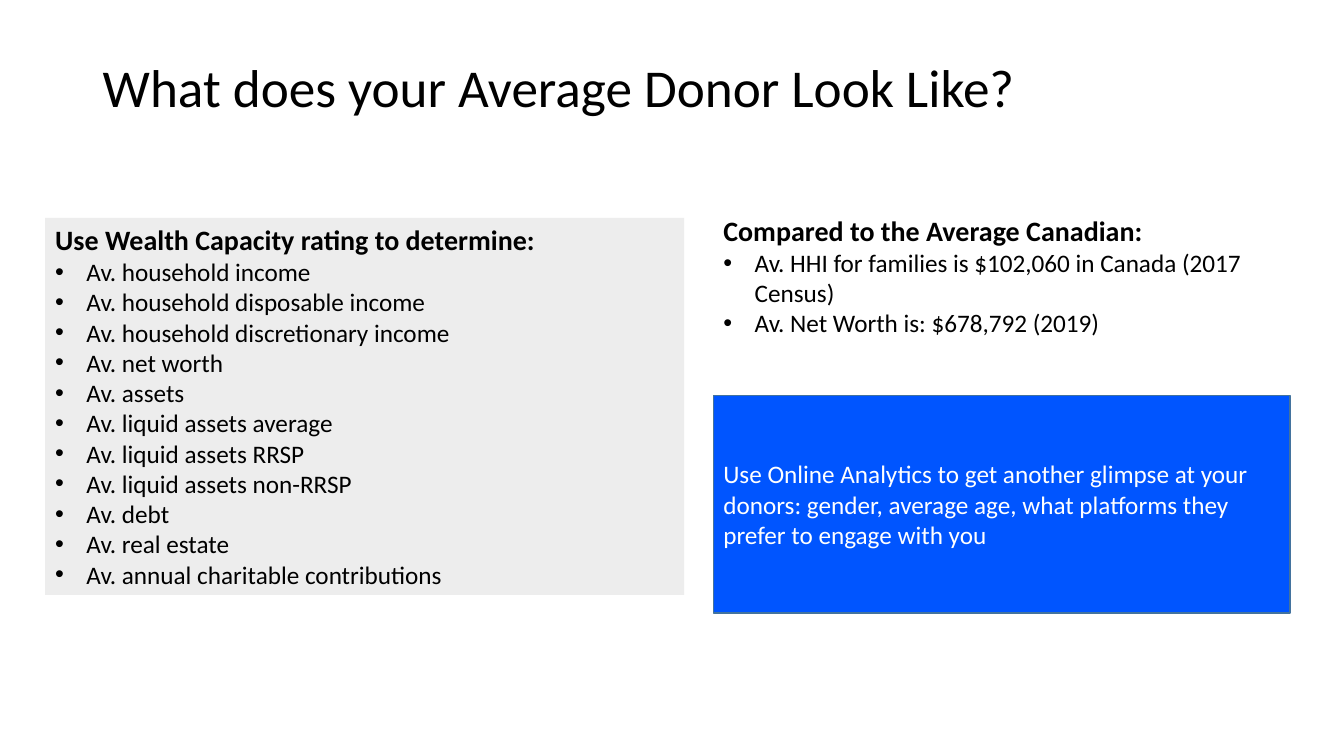
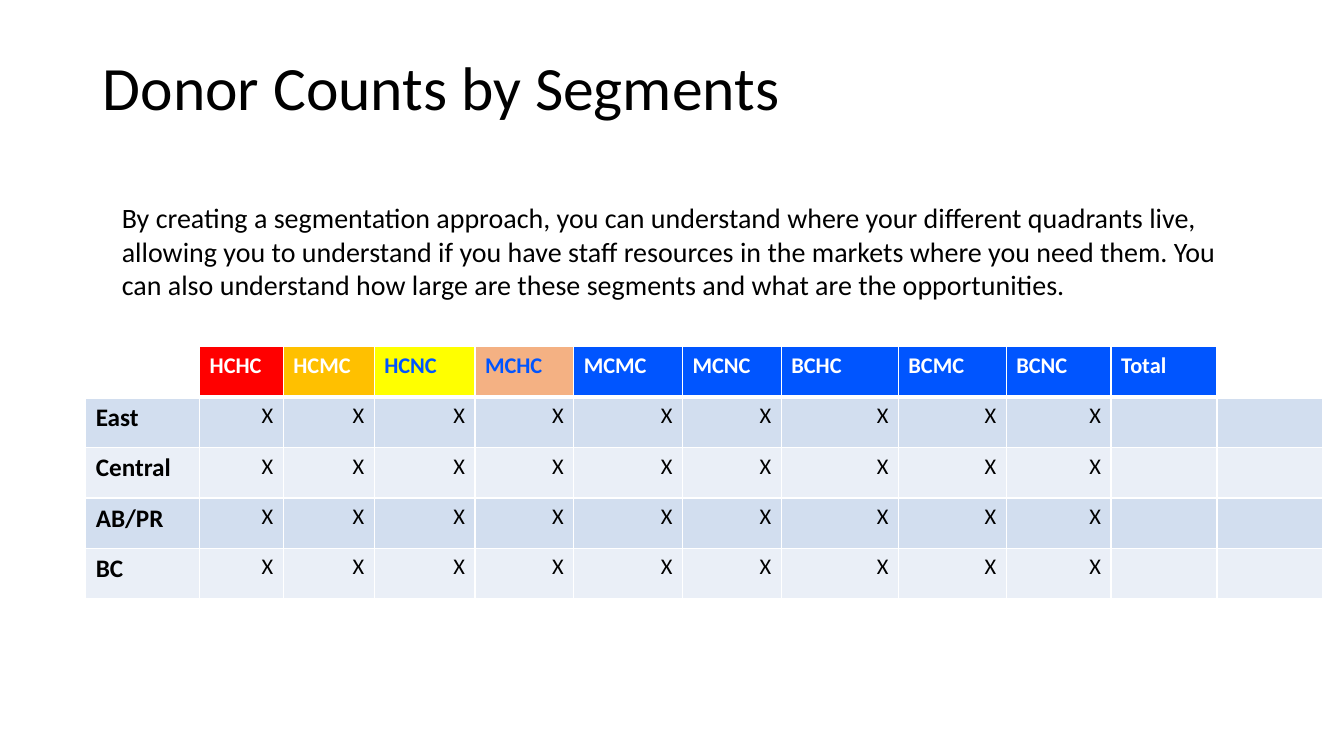
import pptx
import pptx.dml.color
import pptx.enum.shapes
import pptx.enum.text
import pptx.oxml
import pptx.oxml.ns
import pptx.util

Cm = pptx.util.Cm
Pt = pptx.util.Pt
ALIGN = pptx.enum.text.PP_ALIGN
MIDDLE = pptx.enum.text.MSO_ANCHOR.MIDDLE
NS = pptx.oxml.ns.nsdecls("a")

HUES = {
    "black": "000000", "white": "FFFFFF", "blue": "0055FF", "edge": "43739E",
    "grey": "EDEDED", "red": "FF0000", "gold": "FFC000", "yellow": "FFFF00",
    "peach": "F4B183", "dark": "D2DEEF", "light": "EAEFF7",
}
TINT = {name: pptx.dml.color.RGBColor.from_string(code) for name, code in HUES.items()}

FORMS = {
    "title": {"size": Pt(44), "bold": False},
    "head": {"size": Pt(20), "bold": True},
    "lead": {"size": Pt(20), "bold": False},
    "body": {"size": Pt(18), "bold": False},
    "point": {"size": Pt(18), "bold": False},
    "label": {"size": Pt(18), "bold": True},
    "column": {"size": Pt(16), "bold": True},
    "value": {"size": Pt(16), "bold": False},
}


def write(frame, lines, hue="black"):
    """Fill a text frame with (form, words) lines; "point" lines get a bullet."""
    frame.word_wrap = True
    for i, (form, words) in enumerate(lines):
        para = frame.paragraphs[0] if i == 0 else frame.add_paragraph()
        para.text = words
        para.alignment = ALIGN.RIGHT if form == "value" else ALIGN.LEFT
        if form == "title":
            para.line_spacing = 0.9
        if form == "point":
            props = para._p.get_or_add_pPr()
            props.set("marL", str(Cm(0.79)))
            props.set("indent", str(-Cm(0.79)))
            for tag in ('buFont typeface="Arial"', 'buChar char="•"'):
                props.append(pptx.oxml.parse_xml(f"<a:{tag} {NS}/>"))
        for key, value in FORMS[form].items():
            setattr(para.font, key, value)
        para.font.name = "Calibri"
        para.font.color.rgb = TINT[hue]


def place(slide, area, lines, fill=None, edge=None, hue="black", anchor=None):
    """Add a text box, or a rectangle when a fill is given."""
    area = [Cm(side) for side in area]
    if fill:
        shape = slide.shapes.add_shape(pptx.enum.shapes.MSO_SHAPE.RECTANGLE, *area)
        shape.shadow.inherit = False
        shape.fill.solid()
        shape.fill.fore_color.rgb = TINT[fill]
        if edge:
            shape.line.color.rgb = TINT[edge]
            shape.line.width = Pt(1)
        else:
            shape.line.fill.background()
    else:
        shape = slide.shapes.add_textbox(*area)
    shape.text_frame.vertical_anchor = anchor or pptx.enum.text.MSO_ANCHOR.TOP
    write(shape.text_frame, lines, hue)


deck = pptx.Presentation()
deck.slide_width, deck.slide_height = Cm(33.87), Cm(19.05)

# Shared title
pages = []
for words, size in [("What does your Average Donor Look Like?", 38),
                    ("Donor Counts by Segments", 44)]:
    page = deck.slides.add_slide(deck.slide_layouts[6])
    FORMS["title"]["size"] = Pt(size)
    place(page, (2.34, 1.09, 30.45, 2.36), [("title", words)], anchor=MIDDLE)
    pages.append(page)
donor, counts = pages

# Slide 1: average donor
traits = ["household income", "household disposable income",
          "household discretionary income", "net worth", "assets",
          "liquid assets average", "liquid assets RRSP", "liquid assets non-RRSP",
          "debt", "real estate", "annual charitable contributions"]
place(donor, (1.14, 5.49, 16.1, 9.5),
      [("head", "Use Wealth Capacity rating to determine:")]
      + [("point", f"Av. {trait}") for trait in traits], fill="grey")
place(donor, (17.98, 5.26, 14.53, 3.43), [
    ("head", "Compared to the Average Canadian:"),
    ("point", "Av. HHI for families is $102,060 in Canada (2017 Census)"),
    ("point", "Av. Net Worth is: $678,792 (2019)")])
place(donor, (17.98, 9.96, 14.53, 5.49), [
    ("body", "Use Online Analytics to get another glimpse at your donors: gender, "
             "average age, what platforms they prefer to engage with you")],
      fill="blue", edge="edge", hue="white", anchor=MIDDLE)

# Slide 2: segment table
place(counts, (2.82, 4.93, 28.6, 2.82), [
    ("lead", "By creating a segmentation approach, you can understand where your "
             "different quadrants live, allowing you to understand if you have staff "
             "resources in the markets where you need them. You can also understand "
             "how large are these segments and what are the opportunities.")])

heads = ["", "HCHC", "HCMC", "HCNC", "MCHC", "MCMC", "MCNC", "BCHC", "BCMC", "BCNC",
         "Total", ""]
fills = ["white", "red", "gold", "yellow", "peach"] + ["blue"] * 6 + ["white"]
zones = ["East", "Central", "AB/PR", "BC"]
widths = [2.87, 2.11, 2.29, 2.54, 2.49, 2.74, 2.49, 2.95, 2.72, 2.64, 2.67, 2.67]
rows = [heads] + [[zone] + ["X"] * 9 + [""] * 2 for zone in zones]
high = 1.27

table = counts.shapes.add_table(len(rows), len(widths), Cm(2.16), Cm(8.74),
                                Cm(sum(widths)), Cm(high * len(rows))).table
table.first_row = table.horz_banding = False
for col, width in zip(table.columns, widths):
    col.width = Cm(width)
for r, row in enumerate(rows):
    table.rows[r].height = Cm(high)
    for c, words in enumerate(row):
        cell = table.cell(r, c)
        props = cell._tc.get_or_add_tcPr()
        for side in "LRTB":
            thick = (r, side) in [(0, "B"), (1, "T")]
            props.append(pptx.oxml.parse_xml(
                f'<a:ln{side} {NS} w="{Pt(3 if thick else 1)}"><a:solidFill>'
                f'<a:srgbClr val="{HUES["white"]}"/></a:solidFill></a:ln{side}>'))
        cell.fill.solid()
        shade = fills[c] if r == 0 else "dark" if r % 2 else "light"
        cell.fill.fore_color.rgb = TINT[shade]
        if words:
            form = "column" if r == 0 else "value" if c else "label"
            hue = "black" if r else "blue" if shade in ("yellow", "peach") else "white"
            write(cell.text_frame, [(form, words)], hue)

deck.save("out.pptx")
